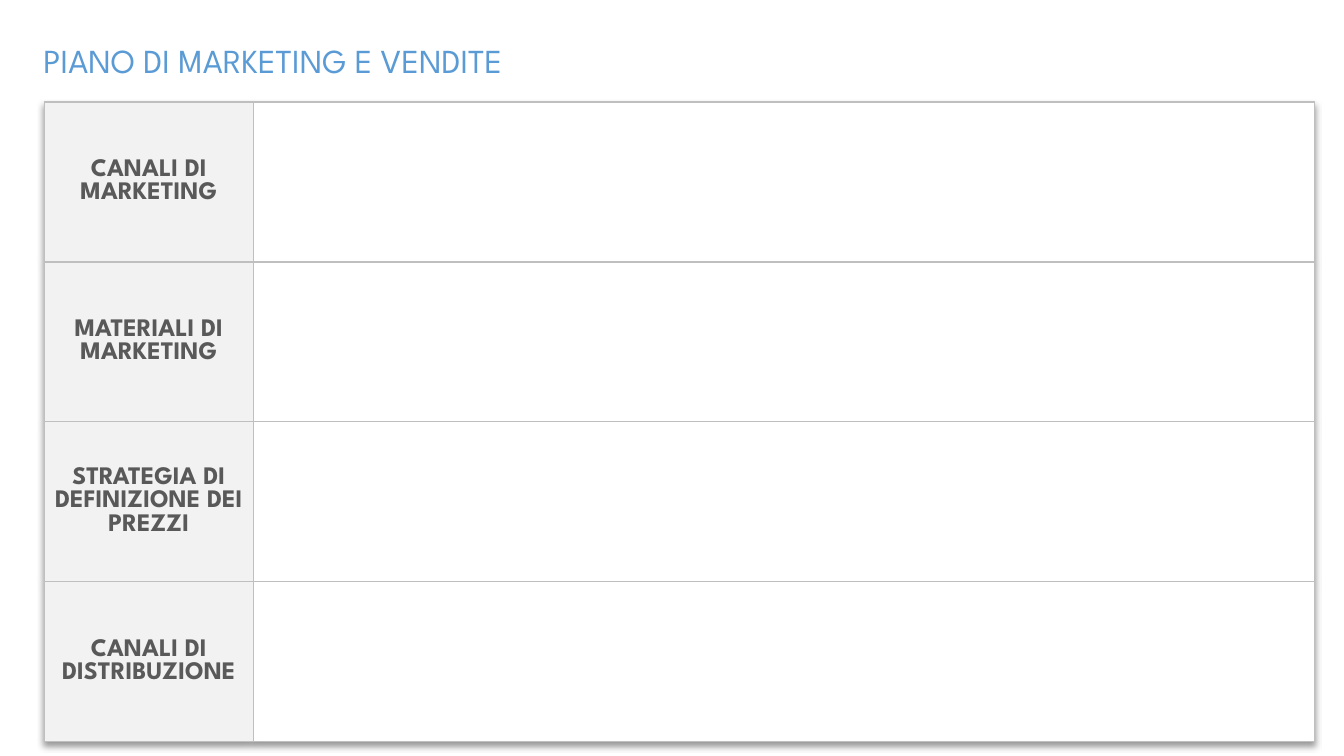
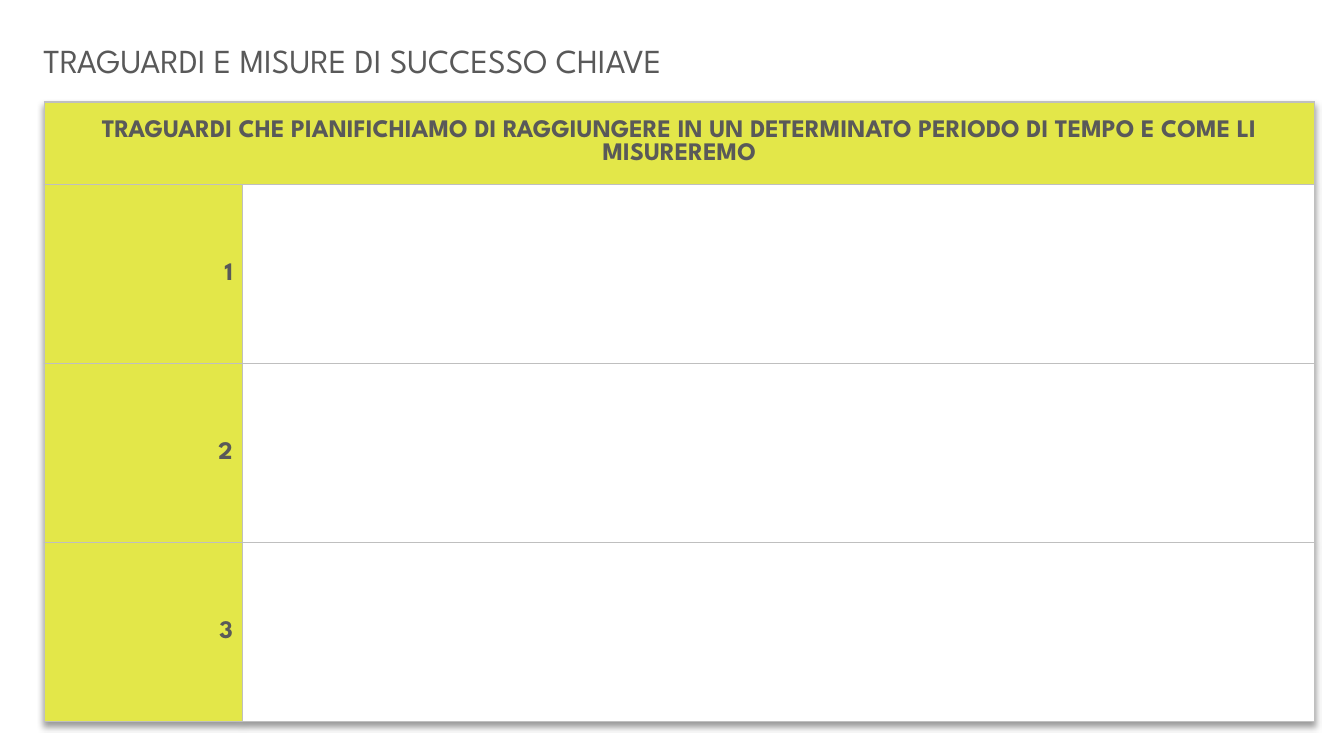
from lxml.etree import SubElement
from pptx import Presentation
from pptx.dml.color import RGBColor
from pptx.enum.text import MSO_ANCHOR, PP_ALIGN
from pptx.oxml import parse_xml
from pptx.oxml.ns import nsdecls, qn
from pptx.util import Cm, Pt

FONT = "League Spartan"
BLUE = RGBColor(0x5B, 0x9B, 0xD5)
DARK = RGBColor(0x59, 0x59, 0x59)
PALE = RGBColor(0xF2, 0xF2, 0xF2)
LIME = RGBColor(0xE3, 0xE7, 0x49)
WHITE = RGBColor(0xFF, 0xFF, 0xFF)
RULE = RGBColor(0xBF, 0xBF, 0xBF)

LEFT, TOP, WIDTH = 1.12, 2.57, 32
SHADOW = f"""<a:effectLst {nsdecls("a")}>
  <a:outerShdw blurRad="50800" dist="38100" dir="5400000" algn="t" rotWithShape="0">
    <a:prstClr val="black"><a:alpha val="40000"/></a:prstClr>
  </a:outerShdw>
</a:effectLst>"""


def write(frame, text, size=18, color=DARK, bold=True, align=PP_ALIGN.CENTER):
    para = frame.paragraphs[0]
    para.alignment = align
    para.line_spacing = 1.0
    run = para.add_run()
    run.text = text
    font = run.font
    font.name, font.size, font.bold = FONT, Pt(size), bold
    font.color.rgb = color


def style(cell, fill):
    """Fill a cell and rule its four sides."""
    cell.fill.solid()
    cell.fill.fore_color.rgb = fill
    cell.vertical_anchor = MSO_ANCHOR.MIDDLE
    props = cell._tc.get_or_add_tcPr()
    for pos, side in enumerate(("lnL", "lnR", "lnT", "lnB")):
        line = SubElement(props, qn(f"a:{side}"), w=str(Pt(1)))
        solid = SubElement(line, qn("a:solidFill"))
        SubElement(solid, qn("a:srgbClr"), val=str(RULE))
        props.insert(pos, line)


PAGES = [
    dict(title="PIANO DI MARKETING E VENDITE", color=BLUE, head=None,
         labels=["CANALI DI MARKETING", "MATERIALI DI MARKETING",
                 "STRATEGIA DI DEFINIZIONE DEI PREZZI", "CANALI DI DISTRIBUZIONE"],
         fill=PALE, align=PP_ALIGN.CENTER, first=5.26, row=4.03),
    dict(title="TRAGUARDI E MISURE DI SUCCESSO CHIAVE", color=DARK,
         head="TRAGUARDI CHE PIANIFICHIAMO DI RAGGIUNGERE IN UN DETERMINATO "
              "PERIODO DI TEMPO E COME LI MISUREREMO",
         labels=["1", "2", "3"],
         fill=LIME, align=PP_ALIGN.RIGHT, first=5, row=4.51),
]
HEAD = 2.08

deck = Presentation()
deck.slide_width, deck.slide_height = Cm(33.87), Cm(19.05)

for page in PAGES:
    slide = deck.slides.add_slide(deck.slide_layouts[5])
    title = slide.shapes.title
    title.left, title.top, title.width, title.height = Cm(0.84), Cm(0.89), Cm(20.52), Cm(1.27)
    title.text_frame.vertical_anchor = MSO_ANCHOR.TOP
    title.text_frame.word_wrap = True
    write(title.text_frame, page["title"], size=24, color=page["color"],
          bold=False, align=PP_ALIGN.LEFT)

    labels = page["labels"]
    tall = [page["row"]] * len(labels)
    if page["head"]:
        tall.insert(0, HEAD)
    table = slide.shapes.add_table(len(tall), 2, Cm(LEFT), Cm(TOP),
                                   Cm(WIDTH), Cm(sum(tall))).table
    table.first_row = table.horz_banding = False
    table._tbl.tblPr.insert(0, parse_xml(SHADOW))
    for col, wide in zip(table.columns, (page["first"], WIDTH - page["first"])):
        col.width = Cm(wide)
    for row, high in zip(table.rows, tall):
        row.height = Cm(high)
        for cell, fill in zip(row.cells, (page["fill"], WHITE)):
            style(cell, fill)

    start = len(tall) - len(labels)
    if page["head"]:
        table.cell(0, 0).merge(table.cell(0, 1))
        write(table.cell(0, 0).text_frame, page["head"])
    for num, label in enumerate(labels, start):
        write(table.cell(num, 0).text_frame, label, align=page["align"])

deck.save("out.pptx")
